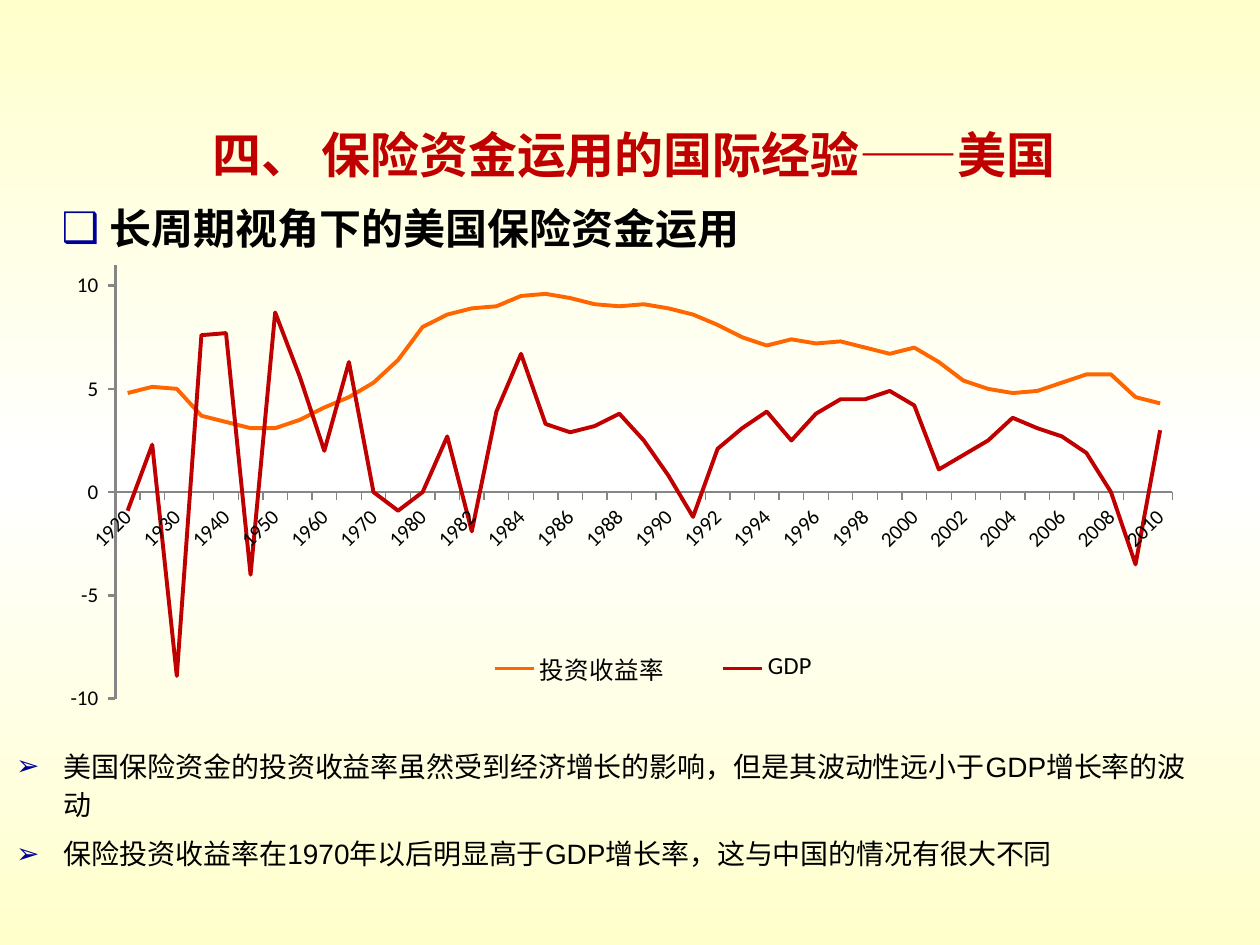
import pptx
import pptx.chart.data
import pptx.dml.color
import pptx.enum.chart
import pptx.enum.text
import pptx.oxml
import pptx.oxml.ns
import pptx.util

Inches = pptx.util.Inches
Pt = pptx.util.Pt


def color(hex_string):
    return pptx.dml.color.RGBColor.from_string(hex_string)


def add_text(box, lines, size, text_color, bold=False, bullet=None, margin=0, spacing=None):
    shape = slide.shapes.add_textbox(*[Inches(value) for value in box])
    frame = shape.text_frame
    frame.word_wrap = True
    frame.vertical_anchor = pptx.enum.text.MSO_ANCHOR.TOP if bullet else pptx.enum.text.MSO_ANCHOR.MIDDLE
    for index, line in enumerate(lines):
        paragraph = frame.paragraphs[0] if index == 0 else frame.add_paragraph()
        if bullet:
            properties = paragraph._p.get_or_add_pPr()
            properties.set("marL", str(Inches(margin)))
            properties.set("indent", str(Inches(-0.38)))
            namespace = pptx.oxml.ns.nsdecls("a")
            for xml in (
                f'<a:buClr {namespace}><a:srgbClr val="000099"/></a:buClr>',
                f'<a:buFont {namespace} typeface="Arial"/>',
                f'<a:buChar {namespace} char="{bullet}"/>',
            ):
                properties.append(pptx.oxml.parse_xml(xml))
            paragraph.line_spacing = spacing
            if index:
                paragraph.space_before = Pt(size * 0.4)
        else:
            paragraph.alignment = pptx.enum.text.PP_ALIGN.CENTER
        run = paragraph.add_run()
        run.text = line
        run.font.name = "Arial"
        run.font.size = Pt(size)
        run.font.bold = bold
        run.font.color.rgb = color(text_color)


presentation = pptx.Presentation()
presentation.slide_width = Inches(10)
presentation.slide_height = Inches(7.5)
slide = presentation.slides.add_slide(presentation.slide_layouts[6])

background = slide.background.fill
background.gradient()
background.gradient_angle = 270
stops = background._fill._gradFill.gsLst
for stop in list(stops):
    stops.remove(stop)
for position, stop_color in ((0, "FFFFCC"), (50, "FFFFFF"), (100, "FFFFCC")):
    stops.append(pptx.oxml.parse_xml(
        f'<a:gs {pptx.oxml.ns.nsdecls("a")} pos="{position * 1000}"><a:srgbClr val="{stop_color}"/></a:gs>'))

add_text((0.39, 1.48, 7.58, 0.55), ["长周期视角下的美国保险资金运用"], 24, "000000",
         bold=True, bullet="❑", margin=0.38, spacing=1.2)
add_text((-0.47, 5.86, 10, 1.41), [
    "美国保险资金的投资收益率虽然受到经济增长的影响，但是其波动性远小于GDP增长率的波动",
    "保险投资收益率在1970年以后明显高于GDP增长率，这与中国的情况有很大不同",
], 16, "000000", bullet="➢", margin=0.88, spacing=1.14)

years = [*range(1920, 1980, 5), *range(1980, 2011)]
series_values = {
    "投资收益率": [
        4.8, 5.1, 5, 3.7, 3.4, 3.1, 3.1, 3.5, 4.1, 4.6, 5.3, 6.4, 8, 8.6, 8.9, 9, 9.5, 9.6, 9.4, 9.1, 9, 9.1,
        8.9, 8.6, 8.1, 7.5, 7.1, 7.4, 7.2, 7.3, 7, 6.7, 7, 6.3, 5.4, 5, 4.8, 4.9, 5.3, 5.7, 5.7, 4.6, 4.3],
    "GDP": [
        -0.9, 2.3, -8.9, 7.6, 7.7, -4, 8.7, 5.6, 2, 6.3, 0, -0.9, 0, 2.7, -1.9, 3.9, 6.7, 3.3, 2.9, 3.2, 3.8, 2.5,
        0.8, -1.2, 2.1, 3.1, 3.9, 2.5, 3.8, 4.5, 4.5, 4.9, 4.2, 1.1, 1.8, 2.5, 3.6, 3.1, 2.7, 1.9, 0, -3.5, 3],
}
chart_data = pptx.chart.data.CategoryChartData()
chart_data.categories = [str(year) for year in years]
for name, values in series_values.items():
    chart_data.add_series(name, values)
chart = slide.shapes.add_chart(
    pptx.enum.chart.XL_CHART_TYPE.LINE, Inches(0.39), Inches(1.95), Inches(9.22), Inches(3.75), chart_data).chart
chart.has_title = False
chart.font.name = "Calibri"
chart.font.size = Pt(10)
chart.font.color.rgb = color("000000")
chart.plots[0].vary_by_categories = False
for series, line_color in zip(chart.plots[0].series, ("FF6600", "C00000")):
    series.smooth = False
    series.format.line.width = Pt(2.25)
    series.format.line.color.rgb = color(line_color)

for axis in (chart.category_axis, chart.value_axis):
    axis.has_major_gridlines = False
    axis.major_tick_mark = pptx.enum.chart.XL_TICK_MARK.OUTSIDE
    axis.minor_tick_mark = pptx.enum.chart.XL_TICK_MARK.NONE
    axis.tick_label_position = pptx.enum.chart.XL_TICK_LABEL_POSITION.NEXT_TO_AXIS
    axis.tick_labels.font.size = Pt(12)
    axis.format.line.color.rgb = color("868686")
chart.value_axis.format.line.width = Pt(1.5)
chart.value_axis.minimum_scale = -10
chart.value_axis.maximum_scale = 11
chart.value_axis.major_unit = 5
chart.value_axis.tick_labels.number_format = "0_ "
chart.value_axis.tick_labels.number_format_is_linked = False

category_element = chart.category_axis._element
category_element.find(pptx.oxml.ns.qn("c:txPr")).find(pptx.oxml.ns.qn("a:bodyPr")).set("rot", "-2700000")
label_skip = pptx.oxml.parse_xml(f'<c:tickLblSkip {pptx.oxml.ns.nsdecls("c")} val="2"/>')
category_element.find(pptx.oxml.ns.qn("c:noMultiLvlLbl")).addprevious(label_skip)

chart.has_legend = True
legend = chart.legend
legend.position = pptx.enum.chart.XL_LEGEND_POSITION.RIGHT
legend.include_in_layout = False
legend.font.size = Pt(14)
layouts = (
    (chart.plots[0]._element.getparent(), '<c:layoutTarget val="inner"/>', (0.057, 0.041, 0.91, 0.918)),
    (legend._element, "", (0.34, 0.85, 0.36, 0.09)),
)
for parent, target, (left, top, width, height) in layouts:
    for old_layout in parent.findall(pptx.oxml.ns.qn("c:layout")):
        parent.remove(old_layout)
    layout = pptx.oxml.parse_xml(
        f'<c:layout {pptx.oxml.ns.nsdecls("c")}><c:manualLayout>{target}'
        f'<c:xMode val="edge"/><c:yMode val="edge"/><c:x val="{left}"/><c:y val="{top}"/>'
        f'<c:w val="{width}"/><c:h val="{height}"/></c:manualLayout></c:layout>')
    parent.insert(0 if target else 1, layout)

add_text((0.62, 0.94, 8.82, 0.57), ["四、 保险资金运用的国际经验——美国"], 28, "C00000", bold=True)

presentation.save("out.pptx")
